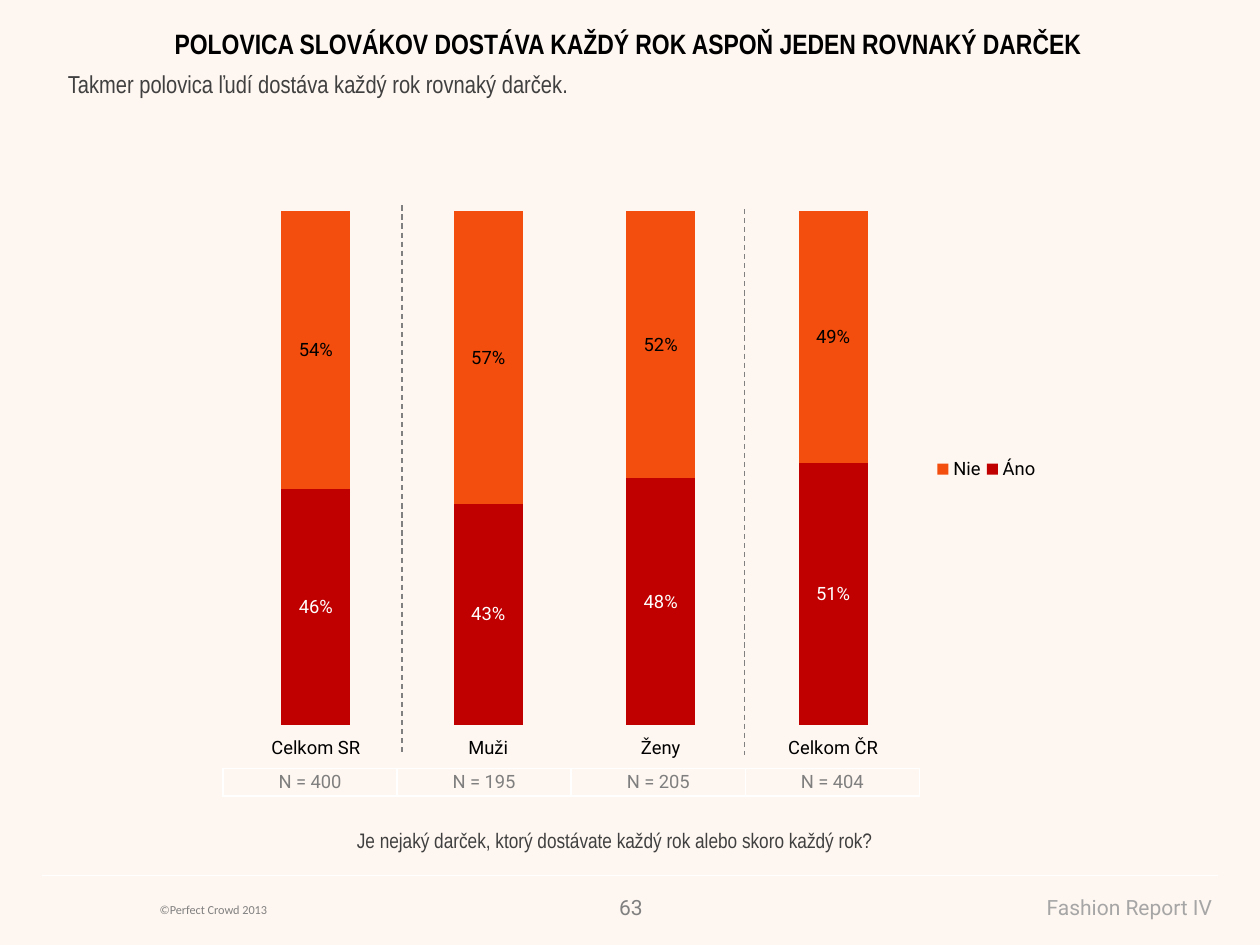
import pptx
import pptx.chart.data
import pptx.dml.color
import pptx.enum.chart
import pptx.enum.dml
import pptx.enum.shapes
import pptx.enum.text
import pptx.oxml
import pptx.oxml.ns
import pptx.util

Pt = pptx.util.Pt
ALIGN = pptx.enum.text.PP_ALIGN
ANCHOR = pptx.enum.text.MSO_ANCHOR
DASH = pptx.enum.dml.MSO_LINE.DASH

COLORS = {
    "background": "FEF6F0", "white": "FFFFFF", "black": "000000",
    "text": "404040", "grey": "808080", "sample": "7F7F7F",
    "report": "A6A6A6", "yes": "C00000", "no": "F34E0D",
}

# Content
TITLE = "POLOVICA SLOVÁKOV DOSTÁVA KAŽDÝ ROK ASPOŇ JEDEN ROVNAKÝ DARČEK"
TEXTS = [  # text, (left, top, width, height), format
    ("Takmer polovica ľudí dostáva každý rok rovnaký darček.",
     (31.7, 36, 672.5, 52.5), dict(size=14)),
    ("Je nejaký darček, ktorý dostávate každý rok alebo skoro každý rok?",
     (25.2, 469.4, 652.3, 21.6), dict(align=ALIGN.CENTER)),
    ("©Perfect Crowd 2013", (84.2, 511.9, 209.5, 15.8),
     dict(size=7, font="Calibri", color="grey")),
    ("63", (344.9, 507.6, 29.5, 21.6),
     dict(font="Roboto", color="grey", align=ALIGN.RIGHT)),
    ("Fashion Report IV", (432.7, 507.6, 267.1, 21.6),
     dict(font="Roboto", color="report", align=ALIGN.RIGHT)),
]
GROUPS = [("Celkom SR", 400), ("Muži", 195), ("Ženy", 205), ("Celkom ČR", 404)]
SERIES = [  # name, values, fill, label colour
    ("Áno", (46, 43, 48, 51), "yes", "white"),
    ("Nie", (54, 57, 52, 49), "no", "black"),
]
LINES = [  # start x, start y, end x, end y, colour, dash
    (24, 500.4, 696, 500.4, "white", None),
    (229.7, 117.4, 229.7, 429.8, "grey", DASH),
    (425.5, 119.5, 425.5, 431.3, "grey", DASH),
]
CHART_BOX = (117.4, 100.8, 628.6, 363.6)
PLOT_AREA = (0.022, 0.055, 0.627, 0.807)
LEGEND_AREA = (0.66, 0.17, 0.1, 0.58)
TABLE_BOX = (127.4, 439.2, 398, 15.8)


def rgb(name):
    return pptx.dml.color.RGBColor.from_string(COLORS[name])


def points(values):
    return [Pt(v) for v in values]


def set_font(font, size, name, color, bold=False):
    font.size, font.name, font.bold = Pt(size), name, bold
    font.color.rgb = rgb(color)


def write(tf, text, size=12, font="Arial Narrow", color="text", bold=False,
          align=ALIGN.LEFT, anchor=ANCHOR.TOP):
    tf.word_wrap = True
    tf.vertical_anchor = anchor
    p = tf.paragraphs[0]
    p.alignment = align
    r = p.add_run()
    r.text = text
    set_font(r.font, size, font, color, bold)


def manual_layout(area, inner=False):
    target = '<c:layoutTarget val="inner"/>' if inner else ""
    sizes = "".join(f'<c:{k} val="{v}"/>' for k, v in zip("xywh", area))
    return pptx.oxml.parse_xml(
        f'<c:layout {pptx.oxml.ns.nsdecls("c")}><c:manualLayout>{target}'
        f'<c:xMode val="edge"/><c:yMode val="edge"/>{sizes}'
        '</c:manualLayout></c:layout>')


def drop_layout(element):
    for old in element.findall(pptx.oxml.ns.qn("c:layout")):
        element.remove(old)


def add_chart(s):
    data = pptx.chart.data.CategoryChartData()
    data.categories = [name for name, _ in GROUPS]
    for name, values, _, _ in SERIES:
        data.add_series(name, values)
    chart = s.shapes.add_chart(
        pptx.enum.chart.XL_CHART_TYPE.COLUMN_STACKED_100,
        *points(CHART_BOX), data).chart
    chart.has_title = False
    set_font(chart.font, 12, "Roboto", "black")

    # Axes
    cat, val = chart.category_axis, chart.value_axis
    cat.tick_label_position = pptx.enum.chart.XL_TICK_LABEL_POSITION.LOW
    set_font(cat.tick_labels.font, 10.5, "Roboto", "black")
    cat.format.line.fill.background()
    val.visible = False
    val.has_major_gridlines = False

    # Series and their labels
    plot = chart.plots[0]
    plot.gap_width, plot.overlap = 150, 100
    plot.vary_by_categories = False
    for series, (_, _, fill, label_color) in zip(plot.series, SERIES):
        series.format.fill.solid()
        series.format.fill.fore_color.rgb = rgb(fill)
        labels = series.data_labels
        labels.show_value = True
        labels.number_format = '#,##0"%"'
        labels.number_format_is_linked = False
        labels.position = pptx.enum.chart.XL_LABEL_POSITION.CENTER
        set_font(labels.font, 10.5, "Roboto", label_color)

    # Legend and plot area
    chart.has_legend = True
    legend = chart.legend
    legend.position = pptx.enum.chart.XL_LEGEND_POSITION.RIGHT
    legend.include_in_layout = False
    set_font(legend.font, 10.5, "Roboto", "black")
    element = legend._element
    drop_layout(element)
    element.find(pptx.oxml.ns.qn("c:overlay")).addprevious(
        manual_layout(LEGEND_AREA))
    area = chart._chartSpace.chart.plotArea
    drop_layout(area)
    area.insert(0, manual_layout(PLOT_AREA, inner=True))


def add_line(s, x1, y1, x2, y2, color, dash):
    line = s.shapes.add_connector(
        pptx.enum.shapes.MSO_CONNECTOR.STRAIGHT, *points((x1, y1, x2, y2)))
    line.line.color.rgb = rgb(color)
    line.line.width = Pt(0.75)
    if dash:
        line.line.dash_style = dash
    line._element.spPr.append(pptx.oxml.parse_xml(
        f'<a:effectLst {pptx.oxml.ns.nsdecls("a")}/>'))


def add_sample_sizes(s):
    table = s.shapes.add_table(1, len(GROUPS), *points(TABLE_BOX)).table
    table.first_row = table.horz_banding = False
    for i, (_, count) in enumerate(GROUPS):
        table.columns[i].width = Pt(TABLE_BOX[2] / len(GROUPS))
        cell = table.cell(0, i)
        cell.fill.background()
        cell.margin_left = cell.margin_right = 0
        cell.margin_top = cell.margin_bottom = 0
        write(cell.text_frame, f"N = {count}", size=10.5, font="Roboto",
              color="sample", align=ALIGN.CENTER)
        cell.vertical_anchor = ANCHOR.MIDDLE


def main():
    prs = pptx.Presentation()
    prs.slide_width, prs.slide_height = Pt(720), Pt(540)
    s = prs.slides.add_slide(prs.slide_layouts[5])
    s.background.fill.solid()
    s.background.fill.fore_color.rgb = rgb("background")

    # Title
    title = s.shapes.title
    title.left, title.top, title.width, title.height = points(
        (40.3, 11.5, 637.2, 26.6))
    write(title.text_frame, TITLE, size=16, color="black", bold=True,
          align=ALIGN.CENTER)

    # Chart with dividers, sample sizes and texts
    add_chart(s)
    for line in LINES:
        add_line(s, *line)
    add_sample_sizes(s)
    for text, box, style in TEXTS:
        write(s.shapes.add_textbox(*points(box)).text_frame, text, **style)

    prs.save("out.pptx")


if __name__ == "__main__":
    main()
